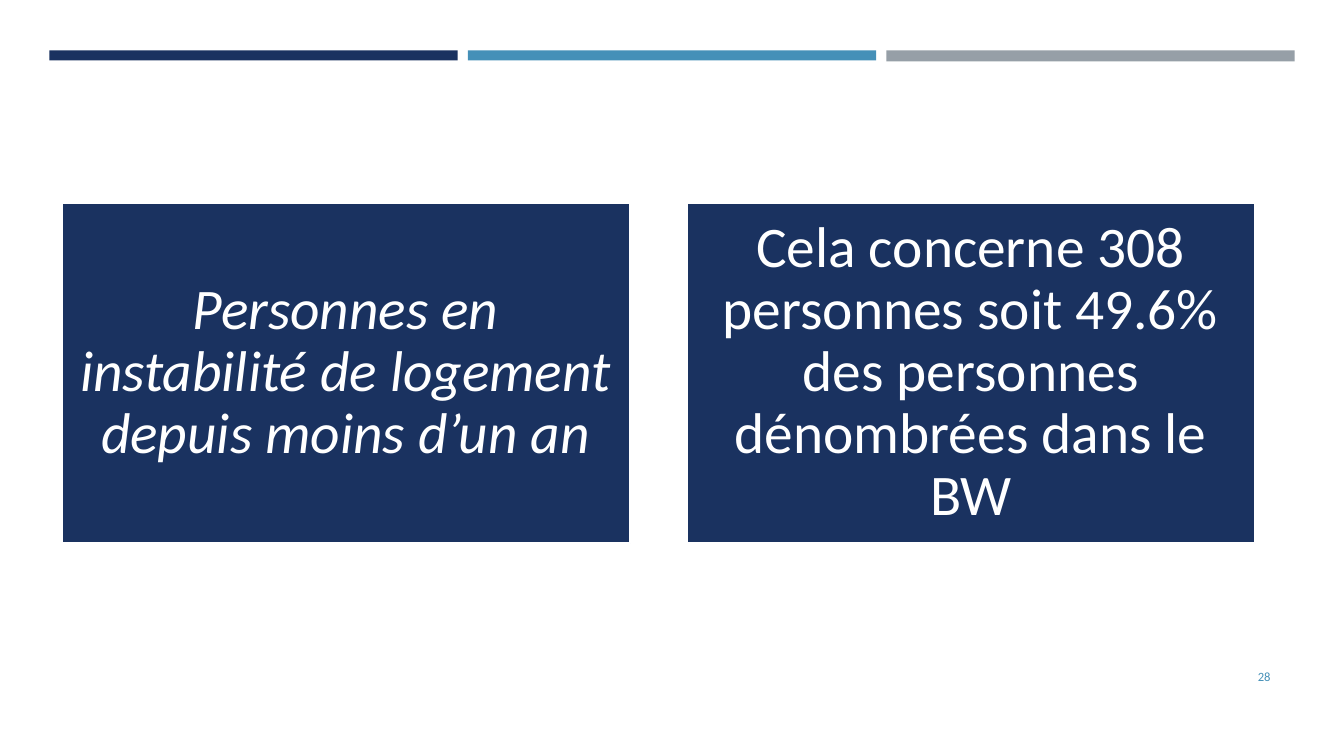
from pptx import Presentation
from pptx.dml.color import RGBColor
from pptx.enum.shapes import MSO_SHAPE
from pptx.enum.text import MSO_ANCHOR, PP_ALIGN
from pptx.util import Inches, Pt

RECTANGLE = MSO_SHAPE.RECTANGLE
MIDDLE = MSO_ANCHOR.MIDDLE
CENTER, RIGHT = PP_ALIGN.CENTER, PP_ALIGN.RIGHT

COLORS = {"navy": "1A3260", "blue": "4590B8", "gray": "969FA7", "white": "FFFFFF"}
FONT = "Calibri"

BARS = [("navy", 0.1), ("blue", 0.1), ("gray", 0.11)]
CARDS = [
    ("Personnes en instabilité de logement depuis moins d’un an", True),
    ("Cela concerne 308 personnes soit 49.6% des personnes dénombrées dans le BW", False),
]
PAGE_NUMBER = "28"

BAR_LEFT, BAR_TOP, BAR_WIDTH, BAR_STEP = 0.49, 0.5, 4.05, 4.15
CARD_LEFT, CARD_TOP, CARD_WIDTH, CARD_HEIGHT, CARD_STEP = 0.61, 2.01, 5.64, 3.38, 6.2


def color(name):
    return RGBColor.from_string(COLORS[name])


def add_rectangle(slide, left, top, width, height, fill, line=None):
    shape = slide.shapes.add_shape(
        RECTANGLE, Inches(left), Inches(top), Inches(width), Inches(height))
    shape.shadow.inherit = False
    shape.fill.solid()
    shape.fill.fore_color.rgb = color(fill)
    if line:
        shape.line.color.rgb = color(line)
        shape.line.width = Pt(1.75)
    else:
        shape.line.fill.background()
    return shape


def write_text(shape, text, size, font_color, align, italic=False, margin=0.1, spacing=1.0):
    frame = shape.text_frame
    frame.word_wrap = True
    frame.vertical_anchor = MIDDLE
    frame.margin_left = frame.margin_right = Inches(margin)
    frame.margin_top = frame.margin_bottom = Inches(margin)
    paragraph = frame.paragraphs[0]
    paragraph.alignment = align
    paragraph.line_spacing = spacing
    run = paragraph.add_run()
    run.text = text
    run.font.name = FONT
    run.font.size = Pt(size)
    run.font.italic = italic
    run.font.color.rgb = color(font_color)


def main():
    presentation = Presentation()
    presentation.slide_width = Inches(13.33)
    presentation.slide_height = Inches(7.5)
    slide = presentation.slides.add_slide(presentation.slide_layouts[6])

    for index, (fill, height) in enumerate(BARS):
        add_rectangle(slide, BAR_LEFT + index * BAR_STEP, BAR_TOP, BAR_WIDTH, height, fill)

    page_box = slide.shapes.add_textbox(Inches(11.55), Inches(6.51), Inches(1.15), Inches(0.4))
    write_text(page_box, PAGE_NUMBER, 9, "blue", RIGHT)

    for index, (text, italic) in enumerate(CARDS):
        card = add_rectangle(slide, CARD_LEFT + index * CARD_STEP, CARD_TOP,
                             CARD_WIDTH, CARD_HEIGHT, "navy", line="white")
        write_text(card, text, 41, "white", CENTER, italic=italic, margin=0.17, spacing=0.9)

    presentation.save("out.pptx")


if __name__ == "__main__":
    main()
